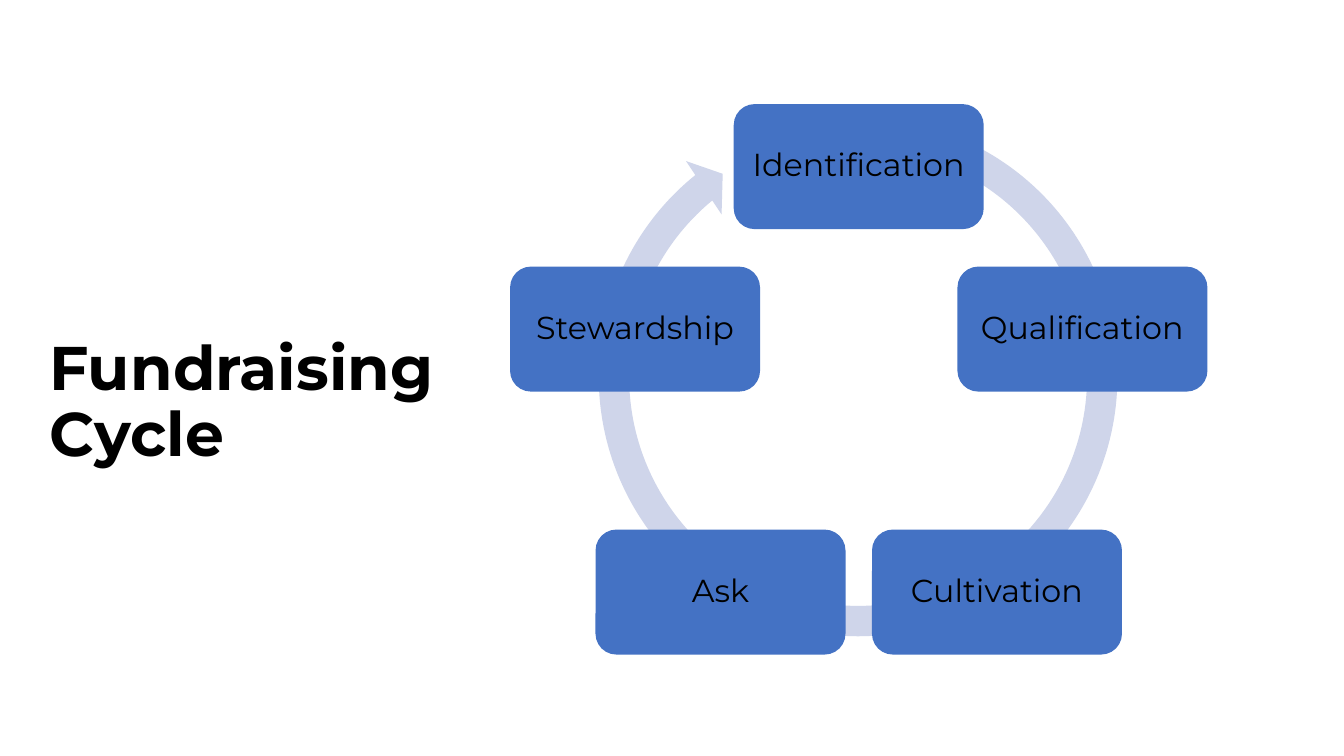
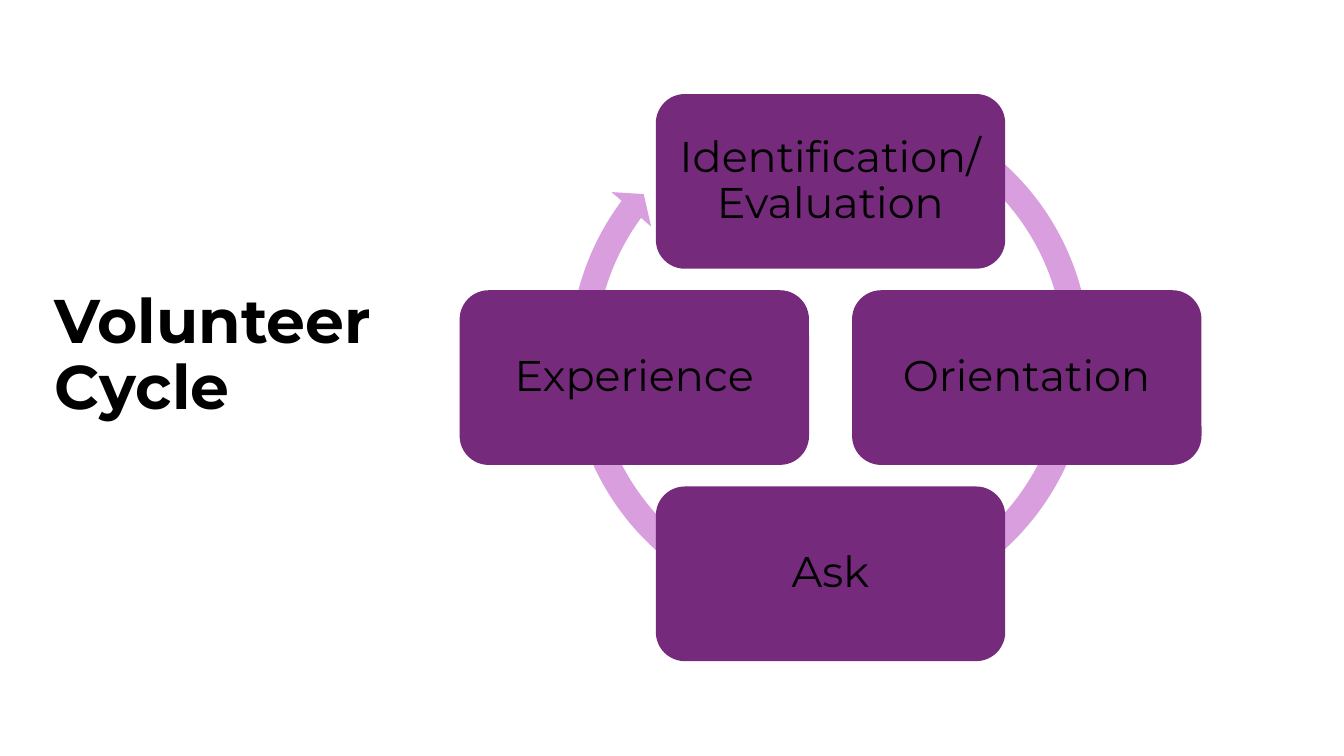
import math
from dataclasses import dataclass

from pptx import Presentation
from pptx import util as u
from pptx.dml.color import RGBColor
from pptx.enum import shapes, text


@dataclass(frozen=True)
class Theme:
    font: str = "Montserrat"
    ink: str = "000000"
    paper: str = "FFFFFF"
    blue: str = "4472C4"
    pale_blue: str = "CFD5EA"
    purple: str = "752A7C"
    pale_purple: str = "D89EDE"
    title_size: int = 33
    five_step_size: int = 17
    four_step_size: int = 23
    line_spacing: float = 0.9


theme = Theme()

cycles = [
    dict(
        title="Fundraising Cycle", title_at=(0.27, 2.46, 3.75, 0.7),
        steps=["Identification", "Qualification", "Cultivation", "Ask", "Stewardship"],
        center=(6.39, 2.99), radius=1.75, box_size=(1.86, 0.93),
        inset=0.07, label_size=theme.five_step_size,
        fill=theme.blue, ring_fill=theme.pale_blue, ring_at=(4.33, 0.75, 4.11, 4.11),
        ring_shape=(0.055, 3.307, 138.484, 173.42, 0.058),
    ),
    dict(
        title="Volunteer Cycle", title_at=(0.31, 2.11, 3.44, 0.7),
        steps=["Identification/\nEvaluation", "Orientation", "Ask", "Experience"],
        center=(6.18, 2.81), radius=1.46, box_size=(2.6, 1.3),
        inset=0.1, label_size=theme.four_step_size,
        fill=theme.purple, ring_fill=theme.pale_purple, ring_at=(4.14, 0.62, 4.07, 4.07),
        ring_shape=(0.047, 2.729, 129.958, 179.198, 0.048),
    ),
]


def add_filled_shape(page, kind, place, color):
    shape = page.shapes.add_shape(kind, *map(u.Inches, place))
    shape.shadow.inherit = False
    shape.fill.solid()
    shape.fill.fore_color.rgb = RGBColor.from_string(color)
    shape.line.fill.background()
    return shape


def write(box, words, size, align, bold=False):
    """Fill the box's first paragraph, with a line break at each newline."""
    box.text_frame.word_wrap = True
    para = box.text_frame.paragraphs[0]
    para.alignment = align
    para.line_spacing = theme.line_spacing
    for index, line in enumerate(words.split("\n")):
        if index:
            para.add_line_break()
        span = para.add_run()
        span.text = line
        span.font.name = theme.font
        span.font.size = u.Pt(size)
        span.font.bold = bold
        span.font.color.rgb = RGBColor.from_string(theme.ink)


deck = Presentation()
deck.slide_width = u.Inches(10)
deck.slide_height = u.Inches(10 * 9 / 16)

for cycle in cycles:
    page = deck.slides.add_slide(deck.slide_layouts[6])
    page.background.fill.solid()
    page.background.fill.fore_color.rgb = RGBColor.from_string(theme.paper)

    title = page.shapes.add_textbox(*map(u.Inches, cycle["title_at"]))
    write(title, cycle["title"], theme.title_size, text.PP_ALIGN.LEFT, bold=True)

    ring = add_filled_shape(page, shapes.MSO_SHAPE.CIRCULAR_ARROW,
                            cycle["ring_at"], cycle["ring_fill"])
    for index, value in enumerate(cycle["ring_shape"]):
        ring.adjustments[index] = value

    # Steps run clockwise from the top, at equal angles
    center_x, center_y = cycle["center"]
    width, height = cycle["box_size"]
    for index, step in enumerate(cycle["steps"]):
        angle = math.tau * index / len(cycle["steps"])
        left = center_x + cycle["radius"] * math.sin(angle) - width / 2
        top = center_y - cycle["radius"] * math.cos(angle) - height / 2
        box = add_filled_shape(page, shapes.MSO_SHAPE.ROUNDED_RECTANGLE,
                               (left, top, width, height), cycle["fill"])
        frame = box.text_frame
        frame.vertical_anchor = text.MSO_ANCHOR.MIDDLE
        frame.margin_left = frame.margin_right = u.Inches(cycle["inset"])
        frame.margin_top = frame.margin_bottom = u.Inches(cycle["inset"])
        write(box, step, cycle["label_size"], text.PP_ALIGN.CENTER)

deck.save("out.pptx")
